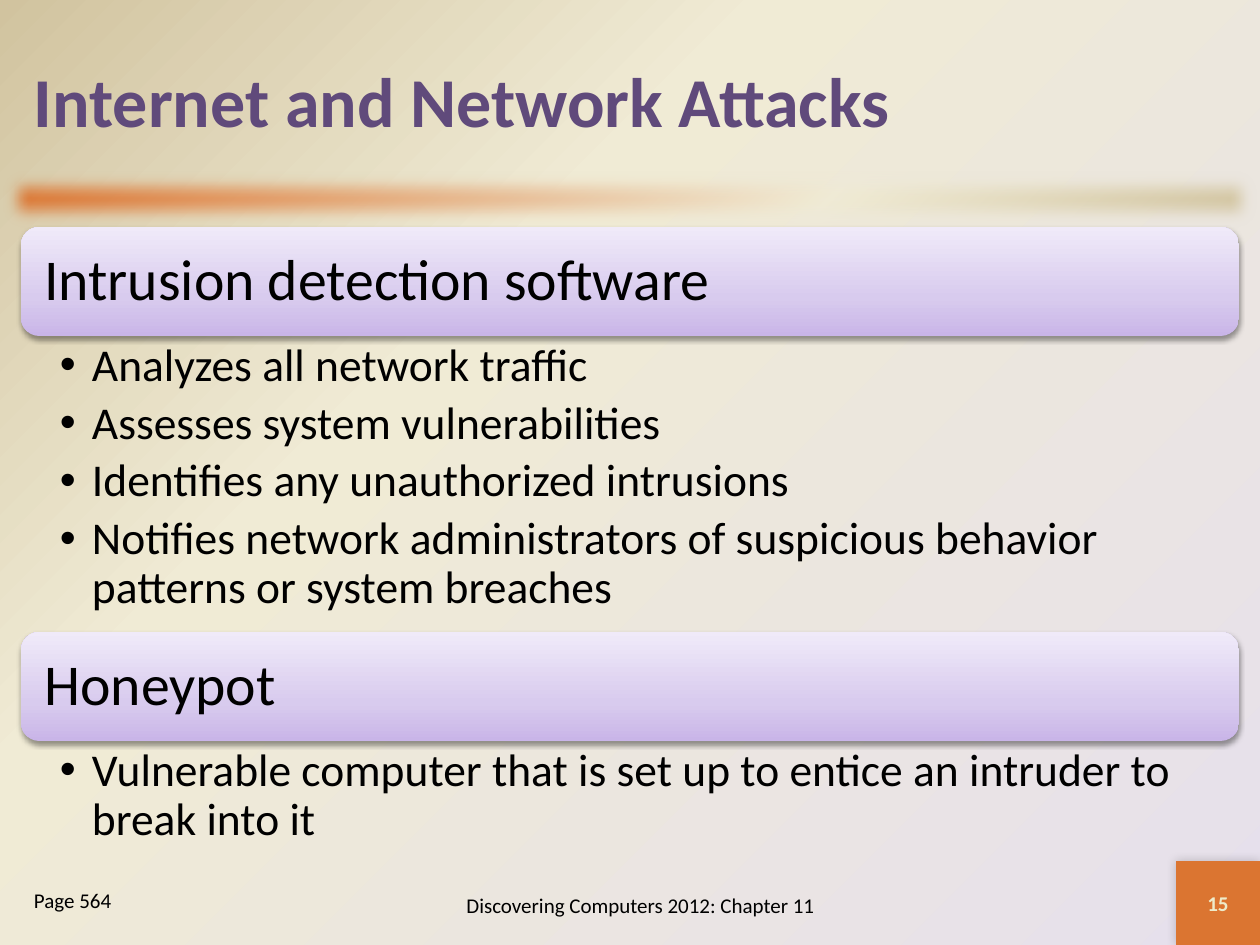
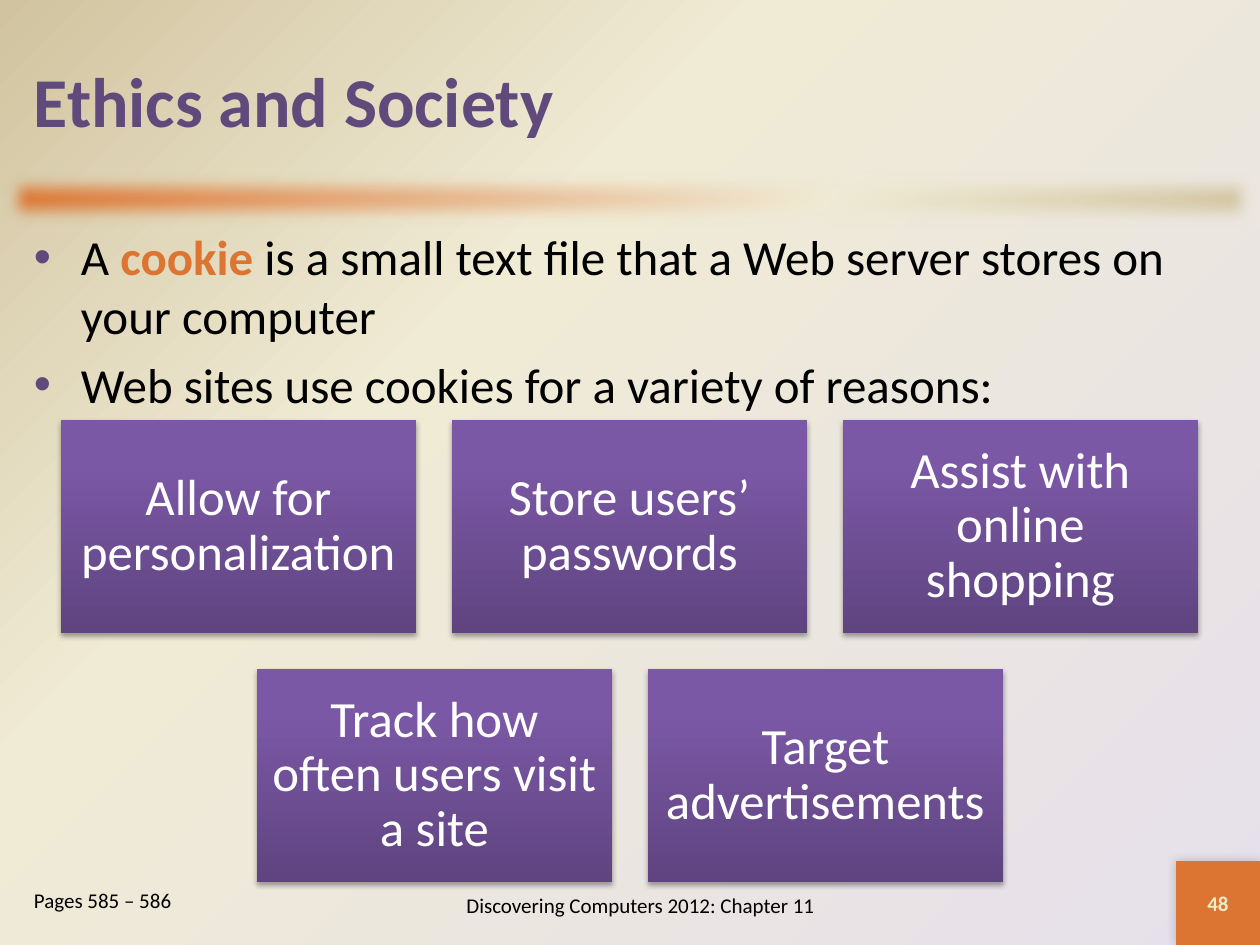
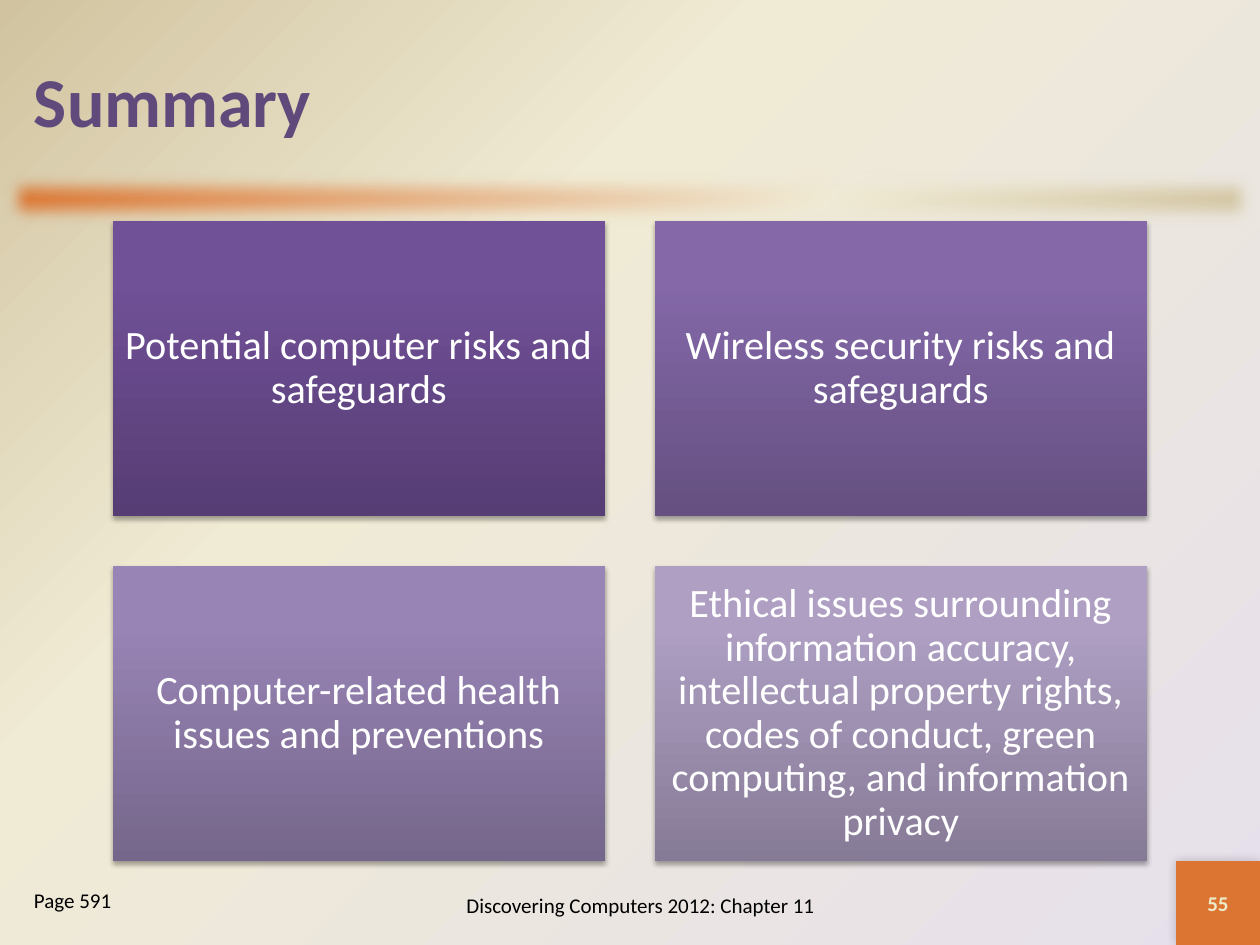
import pptx
import pptx.dml.color
import pptx.enum.shapes
import pptx.enum.text
import pptx.oxml.ns
import pptx.util
from lxml import etree

SCALE = 914400 / 126  # EMU in one px
SLIDE_WIDTH, SLIDE_HEIGHT = 1260, 945
FONT = "Calibri"
FOOTER = "Discovering Computers 2012: Chapter 11"

COLORS = {
    "title": "604A7B",
    "accent": "DB7531",
    "number": "EEEBCA",
    "cream": "F0EBD5",
    "sand": "D1C39F",
    "lavender": "E6E0EC",
    "text": "000000",
    "white": "FFFFFF",
}

# Gradient stops: (position in percent, colour)
BACKGROUND = [(0, COLORS["lavender"]), (65, COLORS["cream"]), (100, COLORS["sand"])]
BAND = [(0, COLORS["accent"]), (65, COLORS["cream"]), (100, COLORS["sand"])]
HEADING = [(0, "C9B5E8"), (35, "D8CBEE"), (100, "F0EAF9")]
REASON = [(0, "5F4480"), (80, "7B58A6"), (100, "7C57A8")]
SUMMARY = [
    [(0, "563D74"), (80, "705097"), (100, "704F99")],
    [(0, "655081"), (80, "8468A8"), (100, "8467AA")],
    [(0, "75668B"), (80, "9884B5"), (100, "9984B7")],
    [(0, "867B96"), (80, "AE9FC3"), (100, "AE9FC4")],
]

# Shadows: opacity in percent, blur and distance in points, angle in degrees
CORNER_SHADOW = (20, 6, 0, 225)
HEADING_SHADOW = (38, 3.1, 1.6, 90)
BLOCK_SHADOW = (35, 3.1, 1.8, 90)

SHAPES = pptx.enum.shapes.MSO_SHAPE
ANCHOR = pptx.enum.text.MSO_ANCHOR
ALIGN = pptx.enum.text.PP_ALIGN


def px(length):
    return pptx.util.Emu(round(length * SCALE))


def drawing(tag, parent=None, **attributes):
    """Make a DrawingML element, inside parent if there is one."""
    name = pptx.oxml.ns.qn("a:" + tag)
    values = {key: str(value) for key, value in attributes.items()}
    if parent is None:
        return etree.Element(name, values)
    return etree.SubElement(parent, name, values)


def gradient(stops, angle=None):
    """Linear gradient at an angle, or one from the lower right corner."""
    fill = drawing("gradFill", rotWithShape=1)
    stop_list = drawing("gsLst", fill)
    for position, color in stops:
        stop = drawing("gs", stop_list, pos=position * 1000)
        drawing("srgbClr", stop, val=color)
    if angle is None:
        circle = drawing("path", fill, path="circle")
        drawing("fillToRect", circle, l=100000, t=100000)
    else:
        drawing("lin", fill, ang=angle * 60000, scaled=0)
    return fill


class Deck:
    def __init__(self):
        self.presentation = pptx.Presentation()
        self.presentation.slide_width = px(SLIDE_WIDTH)
        self.presentation.slide_height = px(SLIDE_HEIGHT)
        self.slide = None

    def new_slide(self, title, number, pages):
        """Start a slide with everything that all slides share."""
        self.slide = self.presentation.slides.add_slide(self.presentation.slide_layouts[6])
        self.slide.background.fill.solid()
        properties = self.slide.background._cSld.bg.bgPr
        properties.replace(properties[0], gradient(BACKGROUND))

        # Soft band under the title
        band = self.shape(SHAPES.RECTANGLE, (0, 168, SLIDE_WIDTH, 63), gradient(BAND, 45))
        drawing("softEdge", self.effects(band), rad=127000)

        # Number in the corner
        corner = self.shape(SHAPES.RECTANGLE, (1176, 861, 84, 84), COLORS["accent"], CORNER_SHADOW)
        self.set_text(corner, [number], 12, "number", bold=True, align=ALIGN.CENTER)

        self.text((21, 21, 1218, 158), [title], 40, "title", bold=True)
        self.text((378, 871, 525, 69), [FOOTER], 12, align=ALIGN.CENTER)
        self.text((21, 882, 231, 63), [pages], 12, anchor=ANCHOR.TOP)

    def effects(self, shape):
        return shape._element.spPr.find(pptx.oxml.ns.qn("a:effectLst"))

    def shape(self, kind, box, fill, shadow=None):
        """Add a shape without outline; fill is a hex string or a gradient."""
        shape = self.slide.shapes.add_shape(kind, *map(px, box))
        shape.shadow.inherit = False
        shape.line.fill.background()
        if isinstance(fill, str):
            shape.fill.solid()
            shape.fill.fore_color.rgb = pptx.dml.color.RGBColor.from_string(fill)
        else:
            shape.fill.background()
            properties = shape._element.spPr
            properties.replace(properties.find(pptx.oxml.ns.qn("a:noFill")), fill)
        if shadow:
            opacity, blur, distance, angle = shadow
            outer = drawing("outerShdw", self.effects(shape), blurRad=pptx.util.Pt(blur),
                            dist=pptx.util.Pt(distance), dir=angle * 60000, rotWithShape=0)
            color = drawing("srgbClr", outer, val="000000")
            drawing("alpha", color, val=opacity * 1000)
        return shape

    def text(self, box, paragraphs, size, color="text", **style):
        text_box = self.slide.shapes.add_textbox(*map(px, box))
        self.set_text(text_box, paragraphs, size, color, **style)

    def set_text(self, shape, paragraphs, size, color="text", bold=False, align=ALIGN.LEFT,
                 anchor=ANCHOR.MIDDLE, margins=(13, 6, 13, 6), line_spacing=None,
                 indent=0, bullet_color=None, gap=0):
        """Fill a shape; a paragraph is a string or a list of (text, accented)."""
        frame = shape.text_frame
        frame.word_wrap = True
        frame.vertical_anchor = anchor
        (frame.margin_left, frame.margin_top,
         frame.margin_right, frame.margin_bottom) = map(px, margins)
        for index, content in enumerate(paragraphs):
            paragraph = frame.add_paragraph() if index else frame.paragraphs[0]
            if indent:
                self.bullet(paragraph, indent, bullet_color or color)
            paragraph.alignment = align
            if line_spacing:
                paragraph.line_spacing = line_spacing
            if index and gap:
                paragraph.space_before = pptx.util.Pt(gap)
            self.style(paragraph.font, size, color, bold)
            runs = [(content, False)] if isinstance(content, str) else content
            for words, accented in runs:
                run = paragraph.add_run()
                run.text = words
                if accented:
                    self.style(run.font, size, "accent", True)

    def style(self, font, size, color, bold):
        font.name = FONT
        font.size = pptx.util.Pt(size)
        font.bold = bold
        font.color.rgb = pptx.dml.color.RGBColor.from_string(COLORS[color])

    def bullet(self, paragraph, indent, color):
        properties = paragraph._p.get_or_add_pPr()
        properties.set("marL", str(px(indent)))
        properties.set("indent", str(-px(indent)))
        drawing("srgbClr", drawing("buClr", properties), val=COLORS[color])
        drawing("buFont", properties, typeface="Arial")
        drawing("buChar", properties, char="•")

    def section(self, top, heading, points, height):
        """Rounded heading bar with bulleted points below it."""
        bar = self.shape(SHAPES.ROUNDED_RECTANGLE, (21, top, 1218, 109),
                         gradient(HEADING, 270), HEADING_SHADOW)
        self.set_text(bar, [heading], 33, margins=(18, 18, 18, 18), line_spacing=0.9)
        self.text((21, top + 109, 1218, height), points, 26, anchor=ANCHOR.TOP,
                  margins=(39, 6, 33, 6), line_spacing=0.9, indent=32, gap=5)

    def block_rows(self, rows, top, width, height, gap, size, margin):
        """Rows of (label, gradient stops) blocks, each row centred."""
        for row_index, row in enumerate(rows):
            row_width = len(row) * (width + gap) - gap
            left = (SLIDE_WIDTH - row_width) // 2
            for column, (label, stops) in enumerate(row):
                box = (left + column * (width + gap), top + row_index * (height + gap),
                       width, height)
                block = self.shape(SHAPES.RECTANGLE, box, gradient(stops, 270), BLOCK_SHADOW)
                self.set_text(block, [label], size, "white", align=ALIGN.CENTER,
                              margins=(margin,) * 4, line_spacing=0.9)


def main():
    deck = Deck()

    # Attacks: two headed lists
    deck.new_slide("Internet and Network Attacks", "15", "Page 564")
    deck.section(227, "Intrusion detection software", [
        "Analyzes all network traffic",
        "Assesses system vulnerabilities",
        "Identifies any unauthorized intrusions",
        "Notifies network administrators of suspicious behavior patterns or system breaches",
    ], 296)
    deck.section(632, "Honeypot", [
        "Vulnerable computer that is set up to entice an intruder to break into it",
    ], 113)

    # Cookies: text above five reasons
    deck.new_slide("Ethics and Society", "48", "Pages 585 – 586")
    deck.text((21, 221, 1218, 640), [
        [("A ", False), ("cookie", True),
         (" is a small text file that a Web server stores on your computer", False)],
        "Web sites use cookies for a variety of reasons:",
    ], 28, anchor=ANCHOR.TOP, indent=47, bullet_color="title", gap=5.6)
    reasons = [
        ["Allow for personalization", "Store users’ passwords", "Assist with online shopping"],
        ["Track how often users visit a site", "Target advertisements"],
    ]
    deck.block_rows([[(reason, REASON) for reason in row] for row in reasons],
                    top=420, width=355, height=213, gap=36, size=29, margin=15)

    # Summary: four topics, each in a lighter purple
    deck.new_slide("Summary", "55", "Page 591")
    topics = list(zip([
        "Potential computer risks and safeguards",
        "Wireless security risks and safeguards",
        "Computer-related health issues and preventions",
        "Ethical issues surrounding information accuracy, intellectual property rights, "
        "codes of conduct, green computing, and information privacy",
    ], SUMMARY))
    deck.block_rows([topics[:2], topics[2:]],
                    top=221, width=492, height=295, gap=50, size=23, margin=12)

    deck.presentation.save("out.pptx")


if __name__ == "__main__":
    main()
